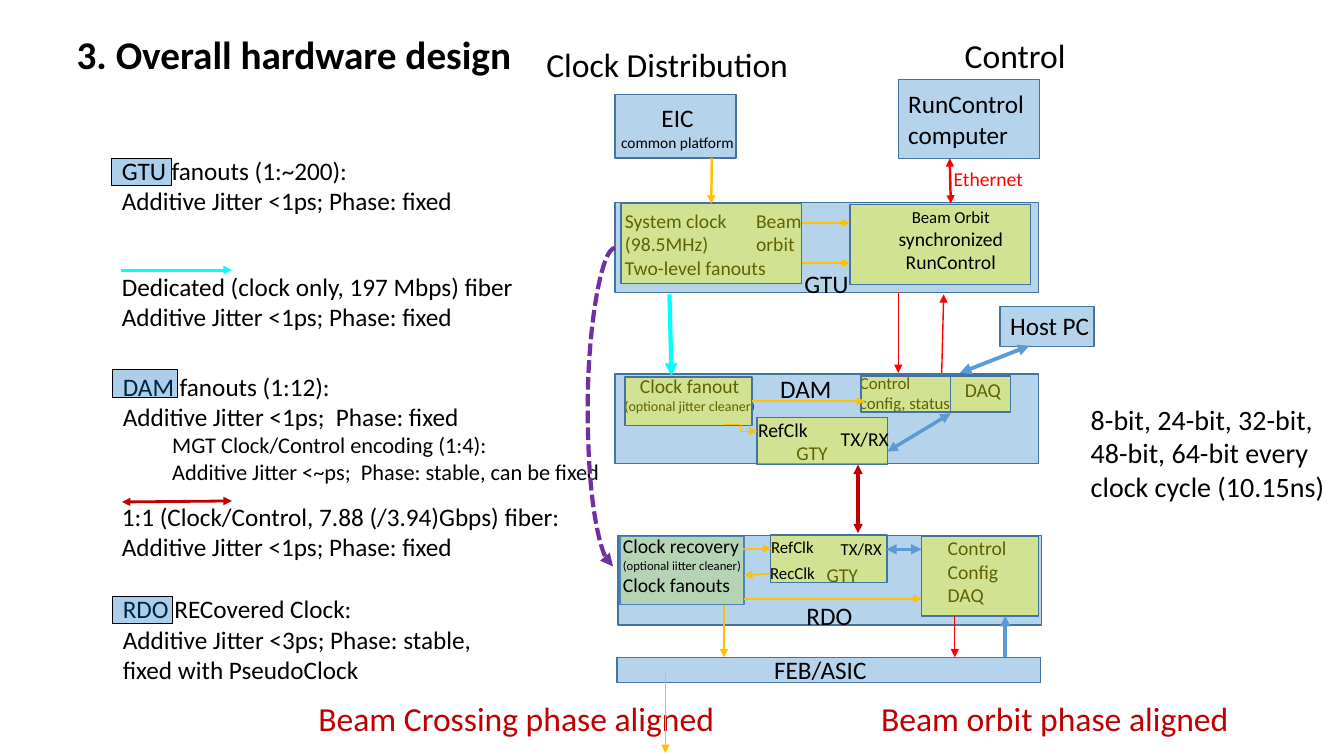
from lxml import etree
from pptx import Presentation
from pptx.dml.color import RGBColor
from pptx.enum.dml import MSO_LINE
from pptx.enum.shapes import MSO_CONNECTOR as CONN, MSO_SHAPE
from pptx.enum.text import MSO_ANCHOR, MSO_AUTO_SIZE as AUTO, PP_ALIGN
from pptx.oxml.ns import qn
from pptx.util import Cm, Pt

FONT = "Calibri"
BLACK = RGBColor(0x00, 0x00, 0x00)
RED = RGBColor(0xFF, 0x00, 0x00)
DARK_RED = RGBColor(0xC0, 0x00, 0x00)
AMBER = RGBColor(0xFF, 0xC0, 0x00)
CYAN = RGBColor(0x00, 0xFF, 0xFF)
BLUE = RGBColor(0x5B, 0x9B, 0xD5)
STEEL = RGBColor(0x43, 0x73, 0x9E)
KEY_BLUE = RGBColor(0x00, 0x70, 0xC0)
YELLOW = RGBColor(0xFF, 0xFF, 0x00)
PURPLE = RGBColor(0x70, 0x30, 0xA0)

# Box style: fill, opacity in percent, line colour, line width
UNIT = (BLUE, 44, STEEL, 1)
BLOCK = (YELLOW, 38, STEEL, 1)
KEY = (KEY_BLUE, 33, BLACK, 0.75)

TITLE = "3. Overall hardware design"
FIXED = "Additive Jitter <1ps; Phase: fixed"

# All places below are in inches: left, top, width, height
BACK_BOXES = [
    ("key GTU", KEY, 1.11, 1.57, 0.59, 0.27),
    ("clock recovery", BLOCK, 6.15, 5.32, 1.23, 0.68),
    ("EIC", UNIT, 6.1, 0.94, 1.2, 0.63),
    ("run control", UNIT, 8.91, 0.79, 1.4, 0.78),
    ("GTU", UNIT, 6.1, 2.01, 4.2, 0.89),
    ("DAM", UNIT, 6.1, 3.71, 4.2, 0.89),
    ("RDO", UNIT, 6.13, 5.31, 4.2, 0.89),
    ("host PC", UNIT, 9.92, 3.04, 0.93, 0.4),
    ("FEB/ASIC", UNIT, 6.12, 6.52, 4.2, 0.25),
]
# Translucent boxes that tint the text beneath them
FRONT_BOXES = [
    ("key DAM", KEY, 1.12, 3.67, 0.64, 0.27),
    ("key RDO", KEY, 1.12, 5.92, 0.59, 0.27),
    ("system clock", BLOCK, 6.16, 2.02, 1.79, 0.79),
    ("beam orbit", BLOCK, 8.43, 2.03, 1.79, 0.79),
    ("clock fanout", BLOCK, 6.2, 3.74, 1.26, 0.48),
    ("DAM control", BLOCK, 8.54, 3.73, 0.89, 0.36),
    ("DAM DAQ", BLOCK, 9.43, 3.73, 0.59, 0.36),
    ("DAM GTY", BLOCK, 7.51, 4.14, 1.29, 0.47),
    ("RDO GTY", BLOCK, 7.64, 5.31, 1.16, 0.47),
    ("RDO control", BLOCK, 9.14, 5.32, 1.16, 0.79),
]

# Place, lines (a line is a string or a list of (text, size) runs), format
TINTED_TEXT = [
    ((1.12, 3.63, 4.2, 0.71), ["DAM fanouts (1:12):", "Additive Jitter <1ps;  Phase: fixed"], {}),
    ((1.12, 5.84, 5, 1.01), ["RDO RECovered Clock:", "Additive Jitter <3ps; Phase: stable,",
                             "fixed with PseudoClock"], {}),
    ((6.1, 2.02, 1.61, 0.81), ["System clock", "(98.5MHz)", "Two-level fanouts"],
     dict(size=14, wrap=False)),
    ((7.4, 2.02, 0.85, 0.57), ["Beam orbit"], dict(size=14)),
    ((6.08, 3.66, 1.52, 0.5), ["Clock fanout", [("(optional jitter cleaner)", 10)]],
     dict(size=14, align=PP_ALIGN.CENTER)),
    ((9.47, 3.7, 0.61, 0.34), ["DAQ"], dict(size=14)),
    ((8.43, 3.65, 1.12, 0.5), ["Control config, status"], dict(size=12)),
    ((7.8, 4.33, 0.53, 0.34), ["GTY"], dict(size=14)),
    ((8.1, 5.54, 0.53, 0.34), ["GTY"], dict(size=14)),
    ((9.3, 5.27, 0.85, 0.81), ["Control", "Config", "DAQ"], dict(size=14)),
]
CLEAR_TEXT = [
    ((1.11, 1.49, 4.2, 0.71), ["GTU fanouts (1:~200):", FIXED], {}),
    ((1.11, 2.64, 4.2, 0.71), ["Dedicated (clock only, 197 Mbps) fiber", FIXED], {}),
    ((1.11, 4.23, 5, 0.64), ["MGT Clock/Control encoding (1:4):",
                             "Additive Jitter <~ps;  Phase: stable, can be fixed"],
     dict(size=16, level=1)),
    ((1.11, 4.92, 4.81, 0.71), ["1:1 (Clock/Control, 7.88 (/3.94)Gbps) fiber:", FIXED], {}),
    ((5.32, 0.39, 2.79, 0.5), ["Clock Distribution"], dict(size=24)),
    ((9.47, 0.3, 2.3, 0.5), ["Control"], dict(size=24)),
    ((3.06, 6.87, 4.64, 0.5), ["Beam Crossing phase aligned"], dict(size=24, color=DARK_RED)),
    ((8.64, 6.87, 3.89, 0.5), ["Beam orbit phase aligned"], dict(size=24, color=DARK_RED)),
    ((6.02, 0.97, 1.4, 0.59), ["EIC", [("common platform", 11)]], dict(align=PP_ALIGN.CENTER)),
    ((8.91, 0.83, 1.5, 0.71), ["RunControl computer"], {}),
    ((9.36, 1.61, 0.9, 0.34), ["Ethernet"], dict(size=14, color=RED, wrap=False)),
    ((7.88, 2.61, 0.82, 0.4), ["GTU"], {}),
    ((8.79, 2, 1.28, 0.77), [[("Beam Orbit ", 12), ("synchronized RunControl", 14)]],
     dict(align=PP_ALIGN.CENTER)),
    ((9.92, 3.03, 1, 0.4), ["Host PC"], dict(wrap=False)),
    ((7.64, 3.65, 0.82, 0.4), ["DAM"], {}),
    ((7.42, 4.1, 0.82, 0.34), ["RefClk"], dict(size=14)),
    ((8.24, 4.19, 0.71, 0.34), ["TX/RX"], dict(size=14)),
    ((7.9, 5.91, 0.82, 0.4), ["RDO"], {}),
    ((6.08, 5.25, 1.39, 0.72), ["Clock recovery", [("(optional iitter cleaner)", 9)],
                                "Clock fanouts"], dict(size=14, wrap=False)),
    ((8.24, 5.3, 0.71, 0.3), ["TX/RX"], dict(size=12)),
    ((7.55, 5.28, 0.82, 0.3), ["RefClk"], dict(size=12)),
    ((7.54, 5.53, 0.82, 0.3), ["RecClk"], dict(size=12)),
    ((7.58, 6.44, 1.14, 0.4), ["FEB/ASIC"], {}),
    ((10.72, 3.94, 2.57, 1.11), ["8-bit, 24-bit, 32-bit, 48-bit, 64-bit every clock cycle (10.15ns)"],
     dict(size=20)),
]

# From x, y, to x, y, colour, width, format
ARROWS = [
    (1.2, 2.68, 2.3, 2.68, CYAN, 2, {}),
    (1.21, 4.98, 2.3, 4.97, DARK_RED, 2, dict(ends="both")),
    (7.06, 1.57, 7.06, 2.02, AMBER, 1.75, dict(end=("system clock", 0))),
    (9.42, 1.57, 9.43, 2.02, RED, 1.75, dict(ends="both")),
    (7.95, 2.21, 8.43, 2.21, AMBER, 1.25, {}),
    (7.95, 2.61, 8.43, 2.61, AMBER, 1.25, {}),
    (6.64, 2.92, 6.66, 3.73, CYAN, 3, {}),
    (8.91, 2.9, 8.91, 3.7, RED, 1, {}),
    (9.34, 3.7, 9.36, 2.92, RED, 1, {}),
    (10.21, 3.43, 9.52, 3.7, BLUE, 2.75, dict(ends="both")),
    (7.46, 3.98, 8.58, 3.98, AMBER, 1, dict(begin=("clock fanout", 3))),
    (7.18, 4.21, 7.51, 4.28, AMBER, 1, dict(kind=CONN.ELBOW)),
    (8.8, 4.48, 9.43, 4.1, BLUE, 2.5, dict(ends="both")),
    (8.51, 4.61, 8.51, 5.29, DARK_RED, 2.25, dict(ends="both")),
    (7.37, 5.45, 7.65, 5.44, AMBER, 1.25, {}),
    (7.38, 5.71, 7.64, 5.69, AMBER, 1.25, dict(ends="head")),
    (7.38, 5.94, 9.14, 5.94, AMBER, 1.25, {}),
    (8.79, 5.45, 9.14, 5.45, BLUE, 2.5, dict(ends="both")),
    (7.18, 6, 7.18, 6.52, AMBER, 1.25, {}),
    (6.6, 6.66, 6.6, 7.47, AMBER, 1, {}),
    (9.47, 6.11, 9.47, 6.52, RED, 1, {}),
    (9.97, 6.52, 9.97, 6.11, BLUE, 2.5, {}),
    (6.1, 2.46, 6.08, 5.62, PURPLE, 3, dict(kind=CONN.CURVE, bulge=0.27, dash=MSO_LINE.SQUARE_DOT)),
]


def lengths(*inches):
    return [Cm(v * 2.54) for v in inches]


def fill_text(tf, lines, size=18, color=BLACK, bold=False, align=PP_ALIGN.LEFT, wrap=True, level=0):
    tf.word_wrap = wrap
    tf.auto_size = AUTO.SHAPE_TO_FIT_TEXT
    tf.vertical_anchor = MSO_ANCHOR.TOP
    for i, line in enumerate(lines):
        p = tf.paragraphs[0] if i == 0 else tf.add_paragraph()
        p.alignment = align
        if level:
            p.level = level
            p._p.get_or_add_pPr().set("marL", str(Cm(1.27 * level)))
        for text, pts in [(line, size)] if isinstance(line, str) else line:
            r = p.add_run()
            r.text = text
            r.font.name, r.font.size, r.font.bold = FONT, Pt(pts), bold
            r.font.color.rgb = color


def add_box(s, style, place):
    fill, opacity, line, width = style
    sp = s.shapes.add_shape(MSO_SHAPE.RECTANGLE, *lengths(*place))
    sp.shadow.inherit = False
    sp.fill.solid()
    sp.fill.fore_color.rgb = fill
    color = sp._element.spPr.find(qn("a:solidFill"))[0]
    etree.SubElement(color, qn("a:alpha")).set("val", str(opacity * 1000))
    sp.line.color.rgb, sp.line.width = line, Pt(width)
    return sp


def add_arrow(s, points, color, width, boxes, kind=CONN.STRAIGHT, ends="tail",
              begin=None, end=None, bulge=None, dash=None):
    """Draw a connector; bulge is how far a curve swings out, in inches."""
    c = s.shapes.add_connector(kind, *lengths(*points))
    if begin:
        c.begin_connect(boxes[begin[0]], begin[1])
    if end:
        c.end_connect(boxes[end[0]], end[1])
    c.line.color.rgb, c.line.width = color, Pt(width)
    if dash:
        c.line.dash_style = dash
    ln = c.line._get_or_add_ln()
    for side in ("head", "tail"):
        if ends in (side, "both"):
            etree.SubElement(ln, qn(f"a:{side}End")).set("type", "triangle")
    spPr = c._element.spPr
    etree.SubElement(spPr, qn("a:effectLst"))
    if bulge:
        swing = round(bulge / abs(points[2] - points[0]) * 100000)
        guides = spPr.find(qn("a:prstGeom")).find(qn("a:avLst"))
        etree.SubElement(guides, qn("a:gd"), name="adj1", fmla=f"val {swing}")


def main():
    prs = Presentation()
    prs.slide_width, prs.slide_height = lengths(13.33, 7.5)
    s = prs.slides.add_slide(prs.slide_layouts[5])
    title = s.shapes.title
    title.left, title.top, title.width, title.height = lengths(0.66, 0.25, 4.56, 0.57)
    fill_text(title.text_frame, [TITLE], size=28, bold=True, wrap=False)

    boxes = {}
    for layer, texts in ((BACK_BOXES, TINTED_TEXT), (FRONT_BOXES, CLEAR_TEXT)):
        for name, style, *place in layer:
            boxes[name] = add_box(s, style, place)
        for place, lines, fmt in texts:
            fill_text(s.shapes.add_textbox(*lengths(*place)).text_frame, lines, **fmt)
    for *points, color, width, fmt in ARROWS:
        add_arrow(s, points, color, width, boxes, **fmt)
    prs.save("out.pptx")


if __name__ == "__main__":
    main()
